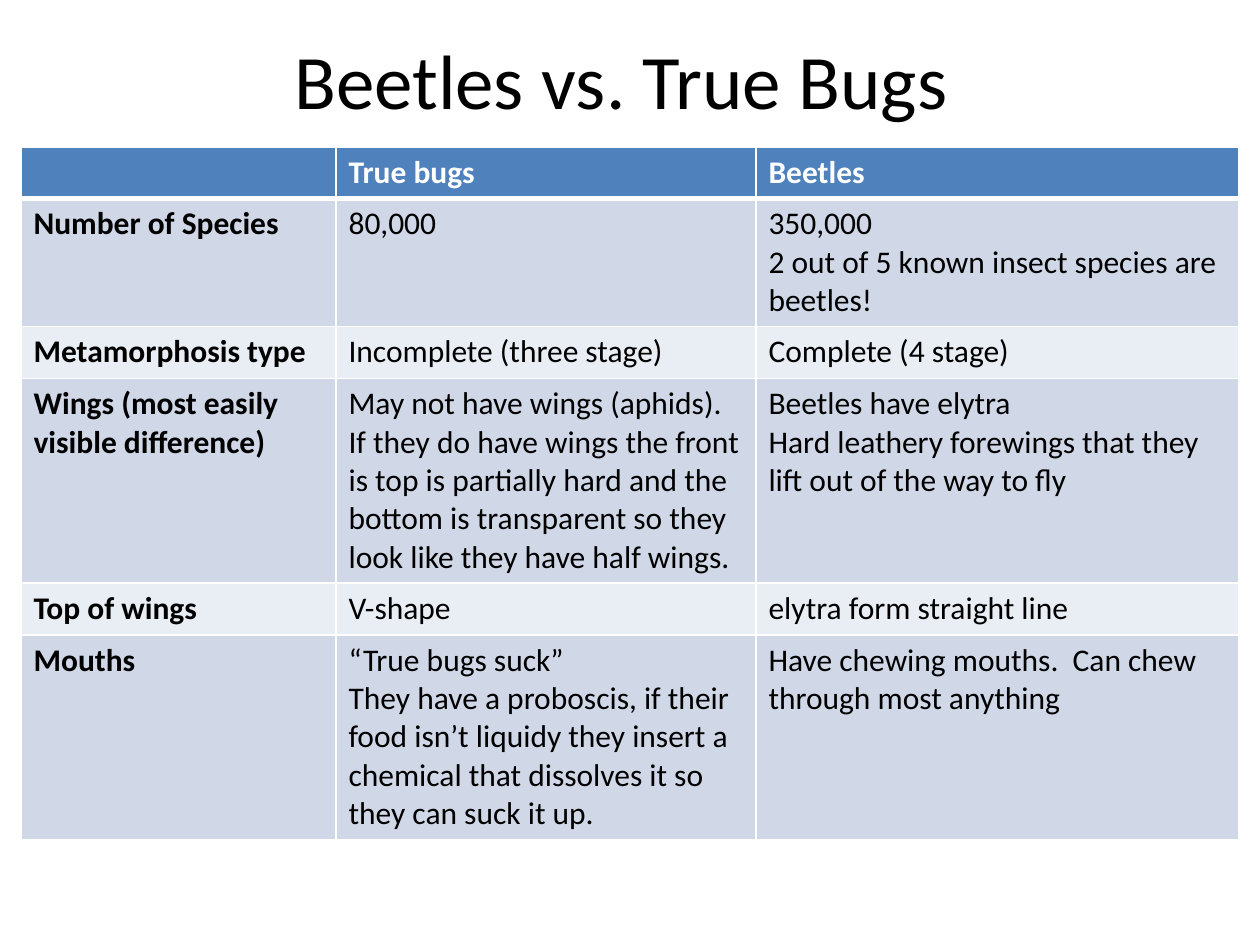
import dataclasses

import pptx
import pptx.dml.color
import pptx.enum.text
import pptx.oxml
import pptx.oxml.ns
import pptx.util

GRID_COLS, GRID_ROWS = 60, 45
TABLE_COLS = (15, 20, 23)
ROW_HEIGHT = pptx.util.Inches(0.41)

ROWS = (
    ("", "True bugs", "Beetles"),
    ("Number of Species", "80,000",
     "350,000\n2 out of 5 known insect species are beetles!"),
    ("Metamorphosis type", "Incomplete (three stage)", "Complete (4 stage)"),
    ("Wings (most easily visible difference)",
     "May not have wings (aphids). If they do have wings the front is top is "
     "partially hard and the bottom is transparent so they look like they "
     "have half wings.",
     "Beetles have elytra\n"
     "Hard leathery forewings that they lift out of the way to fly"),
    ("Top of wings", "V-shape", "elytra form straight line"),
    ("Mouths",
     "“True bugs suck”\n"
     "They have a proboscis, if their food isn’t liquidy they insert a "
     "chemical that dissolves it so they can suck it up.",
     "Have chewing mouths.  Can chew through most anything"),
)


@dataclasses.dataclass(frozen=True)
class Theme:
    font: str = "Calibri"
    title_size: int = 44
    cell_size: int = 18
    text: str = "000000"
    header_text: str = "FFFFFF"
    header_fill: str = "4F81BD"
    bands: tuple = ("D0D8E8", "E9EDF4")
    border: str = "FFFFFF"
    thin: int = 1
    thick: int = 3


THEME = Theme()


def rgb(value):
    return pptx.dml.color.RGBColor.from_string(value)


def grid_box(prs, col, row, cols, rows):
    """Turn grid units into left, top, width and height."""
    x, y = prs.slide_width / GRID_COLS, prs.slide_height / GRID_ROWS
    return [round(n) for n in (col * x, row * y, cols * x, rows * y)]


def set_attributes(obj, values):
    for name, value in values.items():
        setattr(obj, name, value)


def format_font(font, size, color, bold=False):
    set_attributes(font, {"name": THEME.font, "size": pptx.util.Pt(size),
                          "bold": bold})
    font.color.rgb = rgb(color)


def add_title(prs, s, text):
    sp = s.shapes.title
    box = grid_box(prs, 3, 0, 54, 7.5)
    set_attributes(sp, dict(zip(("left", "top", "width", "height"), box)))
    tf = sp.text_frame
    tf.vertical_anchor = pptx.enum.text.MSO_ANCHOR.MIDDLE
    p = tf.paragraphs[0]
    p.alignment = pptx.enum.text.PP_ALIGN.CENTER
    r = p.add_run()
    r.text = text
    format_font(r.font, THEME.title_size, THEME.text)


def set_borders(cell, widths):
    """Draw cell borders; widths are points keyed by L, R, T, B in that order."""
    tc_pr = cell._tc.get_or_add_tcPr()
    for side, width in widths.items():
        tc_pr.append(pptx.oxml.parse_xml(
            f'<a:ln{side} {pptx.oxml.ns.nsdecls("a")} w="{pptx.util.Pt(width)}">'
            f'<a:solidFill><a:srgbClr val="{THEME.border}"/></a:solidFill>'
            f'</a:ln{side}>'))


def fill_cell(cell, text, row, col):
    header = row == 0
    set_borders(cell, {
        "L": THEME.thin, "R": THEME.thin,
        "T": THEME.thick if row == 1 else THEME.thin,
        "B": THEME.thick if header else THEME.thin})
    cell.fill.solid()
    cell.fill.fore_color.rgb = rgb(
        THEME.header_fill if header else THEME.bands[(row - 1) % 2])
    cell.text = text
    for p in cell.text_frame.paragraphs:
        for r in p.runs:
            format_font(r.font, THEME.cell_size,
                        THEME.header_text if header else THEME.text,
                        bold=header or col == 0)


def add_comparison_table(prs, s):
    """Add the table; rows start one line high and grow with their text."""
    box = grid_box(prs, 1, 7, sum(TABLE_COLS), 32.5)
    frame = s.shapes.add_table(len(ROWS), len(TABLE_COLS), *box)
    table = frame.table
    for column, units in zip(table.columns, TABLE_COLS):
        column.width = round(units * prs.slide_width / GRID_COLS)
    for i, texts in enumerate(ROWS):
        table.rows[i].height = ROW_HEIGHT
        for j, text in enumerate(texts):
            fill_cell(table.cell(i, j), text, i, j)
    frame.height = box[3]


def main():
    prs = pptx.Presentation()
    set_attributes(prs, {"slide_width": pptx.util.Inches(10),
                         "slide_height": pptx.util.Inches(7.5)})
    s = prs.slides.add_slide(prs.slide_layouts.get_by_name("Title Only"))
    add_title(prs, s, "Beetles vs. True Bugs ")
    add_comparison_table(prs, s)
    prs.save("out.pptx")


if __name__ == "__main__":
    main()
